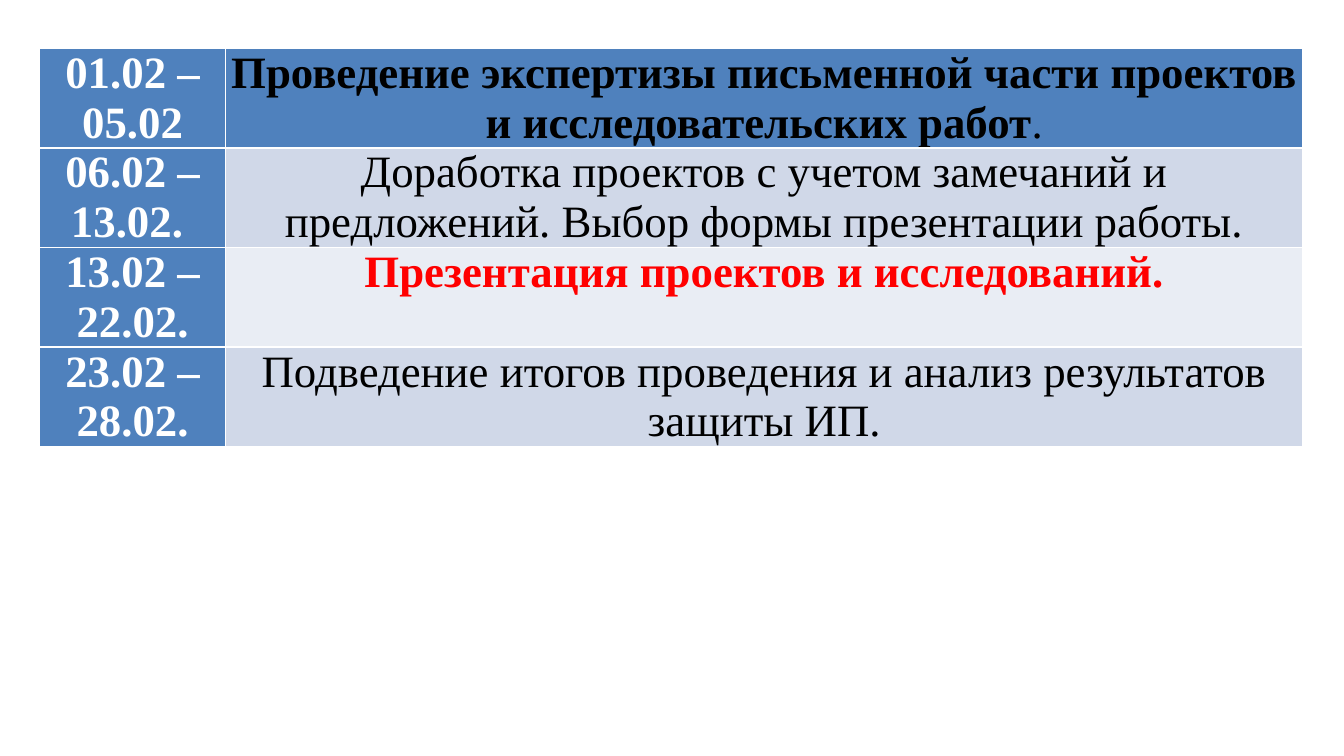
import pptx
import pptx.dml.color
import pptx.enum.text
import pptx.oxml.ns
import pptx.util
import lxml.etree

Inches = pptx.util.Inches
COLORS = {
    "white": "FFFFFF",
    "black": "000000",
    "red": "FF0000",
    "blue": "4F81BD",
    "band_dark": "D0D8E8",
    "band_light": "E9EDF4",
}
STAGES = [
    ("01.02 – 05.02", "blue",
     [("Проведение экспертизы письменной части проектов и исследовательских работ", "black", True),
      (".", "black", False)]),
    ("06.02 – 13.02. ", "band_dark",
     [("Доработка проектов с учетом замечаний и предложений. Выбор формы презентации работы.", "black", False)]),
    ("13.02 – 22.02.", "band_light",
     [("Презентация проектов и исследований.", "red", True)]),
    ("23.02 – 28.02.", "band_dark",
     [("Подведение итогов проведения и анализ результатов защиты ИП.", "black", False)]),
]


class ScheduleSlide:
    font_name = "Times New Roman"
    font_size = 32
    border_width = 1

    def __init__(self, presentation):
        self.slide = presentation.slides.add_slide(presentation.slide_layouts[6])

    def color(self, name):
        return pptx.dml.color.RGBColor.from_string(COLORS[name])

    def borders(self, cell):
        properties = cell._tc.get_or_add_tcPr()
        qn = pptx.oxml.ns.qn
        for side in ("a:lnL", "a:lnR", "a:lnT", "a:lnB"):
            border = lxml.etree.SubElement(
                properties, qn(side), w=str(pptx.util.Pt(self.border_width)))
            fill = lxml.etree.SubElement(border, qn("a:solidFill"))
            lxml.etree.SubElement(fill, qn("a:srgbClr"), val=COLORS["white"])

    def cell(self, cell, pieces, fill):
        self.borders(cell)
        cell.fill.solid()
        cell.fill.fore_color.rgb = self.color(fill)
        cell.margin_left = cell.margin_right = Inches(0.05)
        cell.margin_top = cell.margin_bottom = 0
        paragraph = cell.text_frame.paragraphs[0]
        paragraph.alignment = pptx.enum.text.PP_ALIGN.CENTER
        for text, color, bold in pieces:
            run = paragraph.add_run()
            run.text = text
            run.font.name = self.font_name
            run.font.size = pptx.util.Pt(self.font_size)
            run.font.bold = bold
            run.font.color.rgb = self.color(color)

    def schedule(self, stages, left, top, widths, row_height):
        schedule = self.slide.shapes.add_table(
            len(stages), len(widths), Inches(left), Inches(top),
            Inches(sum(widths)), Inches(row_height * len(stages))).table
        for column, width in zip(schedule.columns, widths):
            column.width = Inches(width)
        for row, (dates, band, task) in enumerate(stages):
            self.cell(schedule.cell(row, 0), [(dates, "white", True)], "blue")
            self.cell(schedule.cell(row, 1), task, band)


def main():
    presentation = pptx.Presentation()
    presentation.slide_width = Inches(13.33)
    presentation.slide_height = Inches(7.5)
    page = ScheduleSlide(presentation)
    page.schedule(STAGES, 0.39, 0.48, (1.85, 10.68), 0.98)
    presentation.save("out.pptx")


if __name__ == "__main__":
    main()
